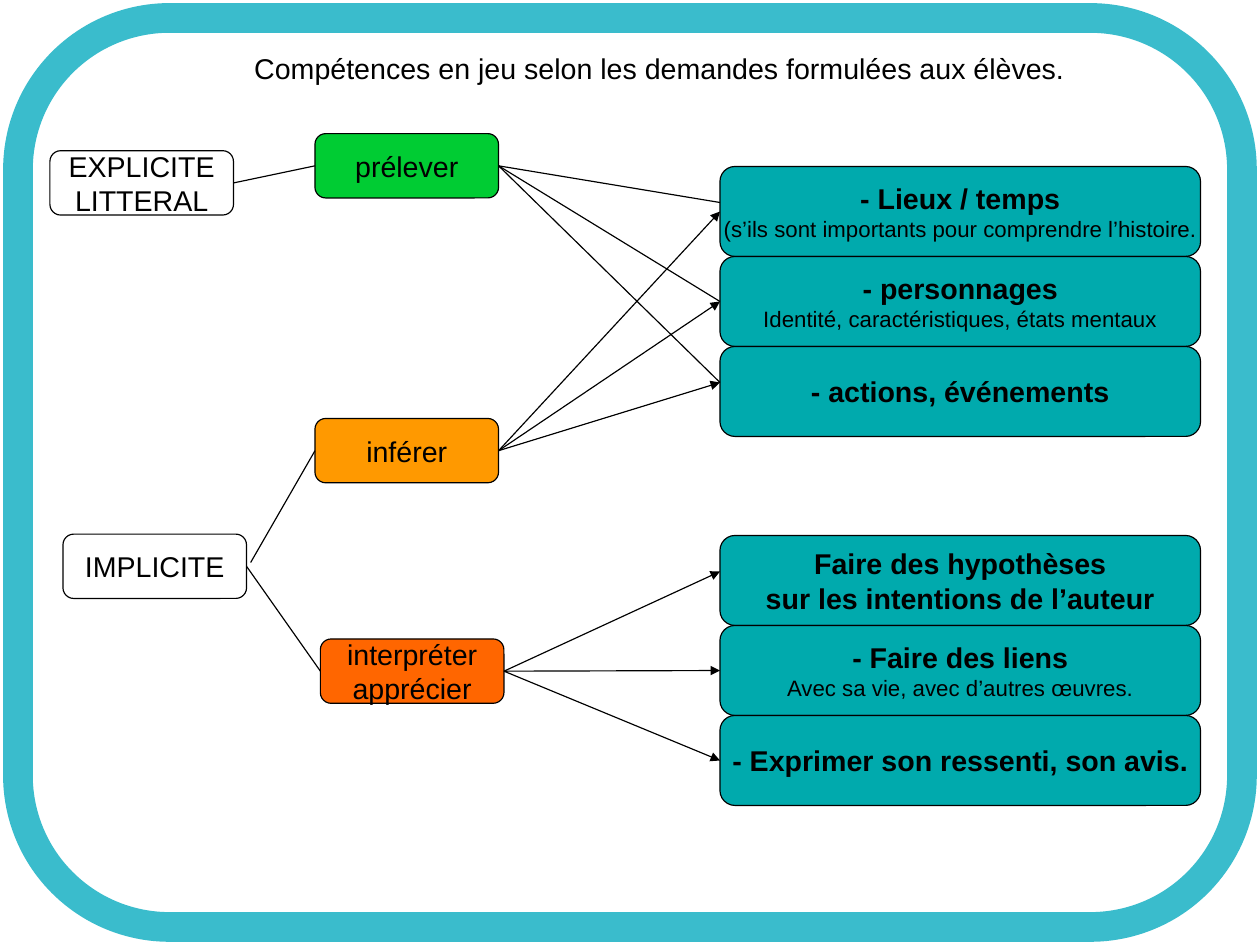
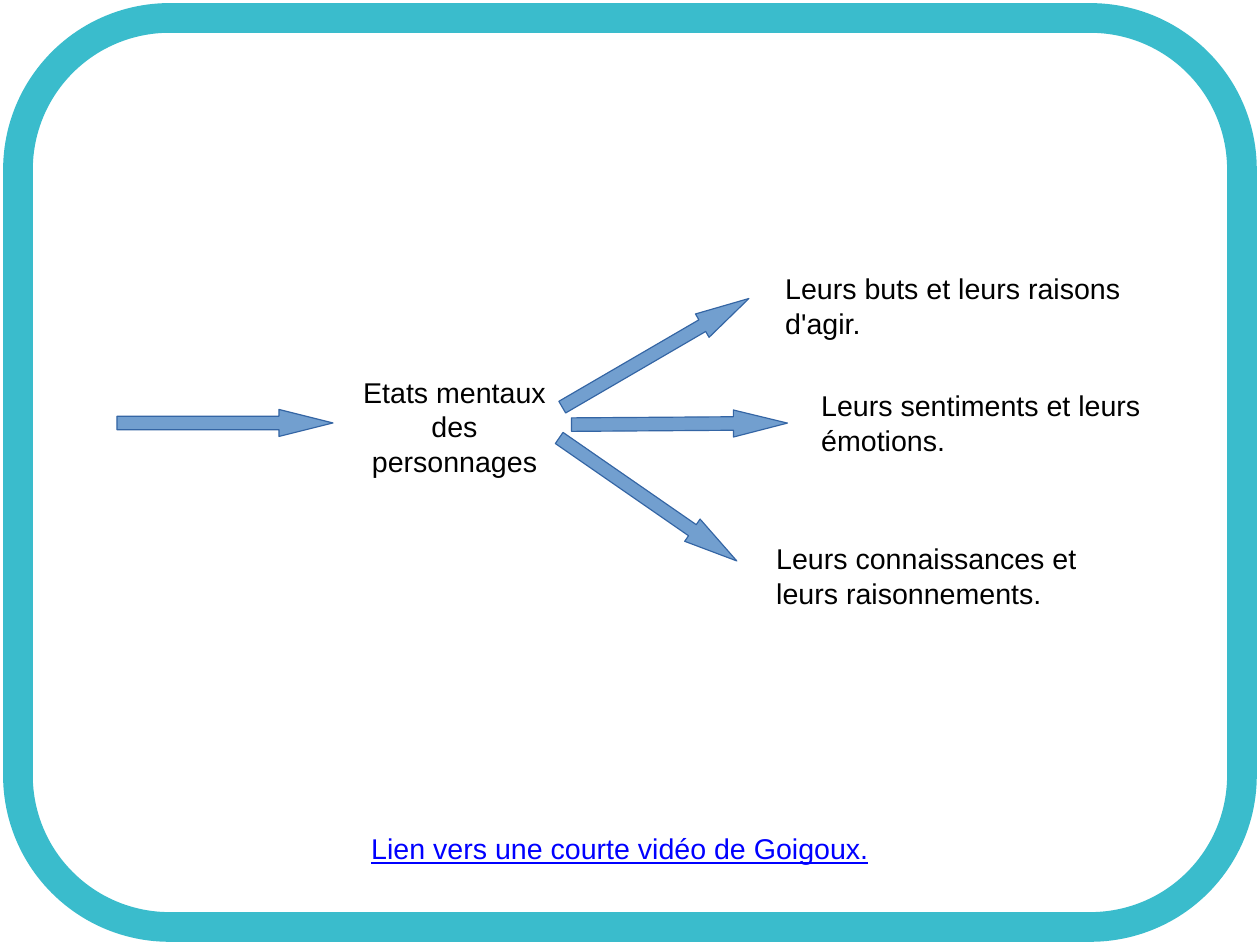
from lxml import etree
from pptx import Presentation
from pptx.dml.color import RGBColor
from pptx.enum import shapes, text
from pptx.oxml.ns import qn
from pptx.util import Cm, Pt

FONT = "Arial"
BLACK, FRAME, TEAL, LINK = "000000", "3ABCCC", "00AAAD", "0000FF"
ARROW_FILL, ARROW_LINE = "729FCF", "3465A4"
LEFT, CENTER = text.PP_ALIGN.LEFT, text.PP_ALIGN.CENTER
TOP, MIDDLE = text.MSO_ANCHOR.TOP, text.MSO_ANCHOR.MIDDLE
RIGHT_SIDE, LEFT_SIDE = 3, 1

# Lengths are centimetres.
TITLE = "Compétences en jeu selon les demandes formulées aux élèves."
SKILL_SIZE = (4.08, 1.43)
SKILLS = {  # name: (left, top, fill, lines)
    "explicite": (1.11, 3.35, None, ["EXPLICITE", "LITTERAL"]),
    "implicite": (1.4, 11.87, None, ["IMPLICITE"]),
    "interpréter": (7.12, 14.2, "FF6600", ["interpréter", "apprécier"]),
    "inférer": (7, 9.3, "FF9900", ["inférer"]),
    "prélever": (7, 2.97, "00CC33", ["prélever"]),
}
TARGET_LEFT, TARGET_WIDTH, TARGET_HEIGHT = 16, 10.68, 2
TARGET_GROUPS = [  # (top, [(name, bold lines, detail)])
    (3.7, [
        ("lieux", ["- Lieux / temps"], "(s’ils sont importants pour comprendre l’histoire."),
        ("personnages", ["- personnages"], "Identité, caractéristiques, états mentaux"),
        ("actions", ["- actions, événements"], None),
    ]),
    (11.9, [
        ("hypothèses", ["Faire des hypothèses", "sur les intentions de l’auteur"], None),
        ("liens", ["- Faire des liens"], "Avec sa vie, avec d’autres œuvres."),
        ("ressenti", ["- Exprimer son ressenti, son avis."], None),
    ]),
]
LINKS = [  # (from, to, arrowhead, rise of the end above the middle of the side)
    ("explicite", "prélever", False, 0),
    ("implicite", "interpréter", False, 0),
    ("prélever", "lieux", False, 0.2),
    ("prélever", "personnages", False, 0),
    ("prélever", "actions", False, 0.2),
    ("inférer", "lieux", True, 0),
    ("inférer", "personnages", True, 0),
    ("inférer", "actions", True, 0.2),
    ("interpréter", "hypothèses", True, 0.2),
    ("interpréter", "liens", True, 0),
    ("interpréter", "ressenti", True, 0),
]
IMPLICIT_START = (5.57, 12.5)

CENTRAL_IDEA = "Etats mentaux des personnages"
NOTES = [  # (text, box, colour, underline)
    ("Lien vers une courte vidéo de Goigoux.", (8, 18.34, 12.8, 1.68), LINK, True),
    ("Leurs buts et leurs raisons d'agir.", (17.2, 5.9, 8.8, 1.68), BLACK, False),
    ("Leurs sentiments et leurs émotions.", (18, 8.5, 7.6, 1.68), BLACK, False),
    ("Leurs connaissances et leurs raisonnements.", (17, 11.9, 8.2, 1.68), BLACK, False),
]
ARROW_SIZE = (4.8, 0.6)
ARROWS = [  # (left, top, rotation)
    (2.6, 9.1, 0),
    (12.17, 7.54, -30.2),
    (12, 10.8, 34.7),
    (12.7, 9.12, -0.4),
]


def rgb(colour):
    return RGBColor.from_string(colour)


def lengths(values):
    return [Cm(value) for value in values]


def write(shape, lines, size=18, bold=False, colour=BLACK, underline=False,
          align=LEFT, anchor=TOP, wrap=True, detail=None):
    """Fill a shape with one paragraph a line, then a smaller plain detail."""
    frame = shape.text_frame
    frame.auto_size = text.MSO_AUTO_SIZE.NONE
    frame.word_wrap = wrap
    frame.vertical_anchor = anchor
    frame.margin_left = frame.margin_right = Cm(0.25)
    frame.margin_top = frame.margin_bottom = Cm(0.13)
    rows = [(line, size, bold) for line in lines]
    if detail:
        rows.append((detail, 14, False))
    for index, (line, row_size, row_bold) in enumerate(rows):
        paragraph = frame.add_paragraph() if index else frame.paragraphs[0]
        paragraph.alignment = align
        run = paragraph.add_run()
        run.text = line
        font = run.font
        font.name, font.size, font.bold = FONT, Pt(row_size), row_bold
        font.underline = underline
        font.color.rgb = rgb(colour)


def add_shape(slide, kind, box, fill=None, line=BLACK, line_width=0.75):
    shape = slide.shapes.add_shape(kind, *lengths(box))
    shape.shadow.inherit = False
    if fill:
        shape.fill.solid()
        shape.fill.fore_color.rgb = rgb(fill)
    else:
        shape.fill.background()
    shape.line.color.rgb = rgb(line)
    shape.line.width = Pt(line_width)
    return shape


def add_label_box(slide, box, fill, lines, **formatting):
    shape = add_shape(slide, shapes.MSO_SHAPE.ROUNDED_RECTANGLE, box, fill)
    write(shape, lines, align=CENTER, anchor=MIDDLE, wrap=False, **formatting)
    return shape


def add_link(slide, start, end, arrowhead=False, rise=0, start_point=None):
    """Join the right side of start to the left side of end."""
    x, y = lengths(start_point or (0, 0))
    end_y = end.top + end.height // 2 - Cm(rise)
    connector = slide.shapes.add_connector(
        shapes.MSO_CONNECTOR.STRAIGHT, x, y, end.left, end_y)
    if not start_point:
        connector.begin_connect(start, RIGHT_SIDE)
    if not rise:
        connector.end_connect(end, LEFT_SIDE)
    connector.line.color.rgb = rgb(BLACK)
    connector.line.width = Pt(0.75)
    if arrowhead:
        etree.SubElement(connector.line._get_or_add_ln(), qn("a:tailEnd"), type="triangle")
    etree.SubElement(connector._element.spPr, qn("a:effectLst"))


def add_framed_slide(presentation, title, title_box, align):
    slide = presentation.slides.add_slide(presentation.slide_layouts[5])
    add_shape(slide, shapes.MSO_SHAPE.ROUNDED_RECTANGLE, (0.4, 0.4, 27.2, 20.2),
              line=FRAME, line_width=18.71)
    heading = slide.shapes.title
    heading.left, heading.top, heading.width, heading.height = lengths(title_box)
    write(heading, [title], align=align)
    return slide


def build_skills_slide(presentation):
    slide = add_framed_slide(presentation, TITLE, (5.4, 1, 18.8, 1.68), LEFT)
    boxes = {}
    for name, (left, top, fill, lines) in SKILLS.items():
        boxes[name] = add_label_box(slide, (left, top, *SKILL_SIZE), fill, lines)
    for group_top, targets in TARGET_GROUPS:
        for row, (name, lines, detail) in enumerate(targets):
            box = (TARGET_LEFT, group_top + row * TARGET_HEIGHT, TARGET_WIDTH, TARGET_HEIGHT)
            boxes[name] = add_label_box(slide, box, TEAL, lines, bold=True, detail=detail)
    for start, end, arrowhead, rise in LINKS:
        add_link(slide, boxes[start], boxes[end], arrowhead, rise)
    add_link(slide, boxes["implicite"], boxes["inférer"], start_point=IMPLICIT_START)


def build_mental_states_slide(presentation):
    slide = add_framed_slide(presentation, CENTRAL_IDEA, (7.7, 8.2, 4.8, 2.39), CENTER)
    for left, top, rotation in ARROWS:
        arrow = add_shape(slide, shapes.MSO_SHAPE.RIGHT_ARROW, (left, top, *ARROW_SIZE),
                          ARROW_FILL, ARROW_LINE)
        arrow.adjustments[0], arrow.adjustments[1] = 0.5, 2
        arrow.rotation = rotation
    for note, box, colour, underline in NOTES:
        write(slide.shapes.add_textbox(*lengths(box)), [note], colour=colour, underline=underline)


def main():
    presentation = Presentation()
    presentation.slide_width, presentation.slide_height = Cm(28), Cm(21)
    build_skills_slide(presentation)
    build_mental_states_slide(presentation)
    presentation.save("out.pptx")


if __name__ == "__main__":
    main()
